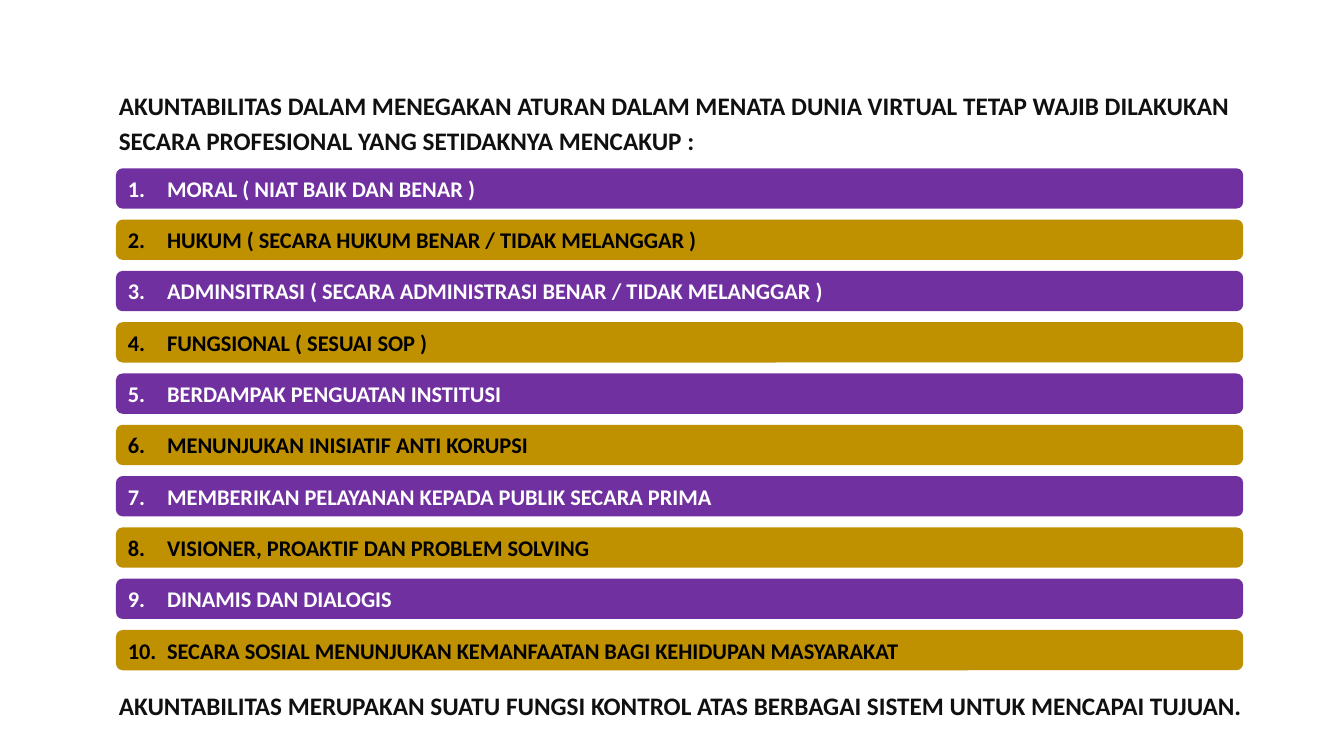
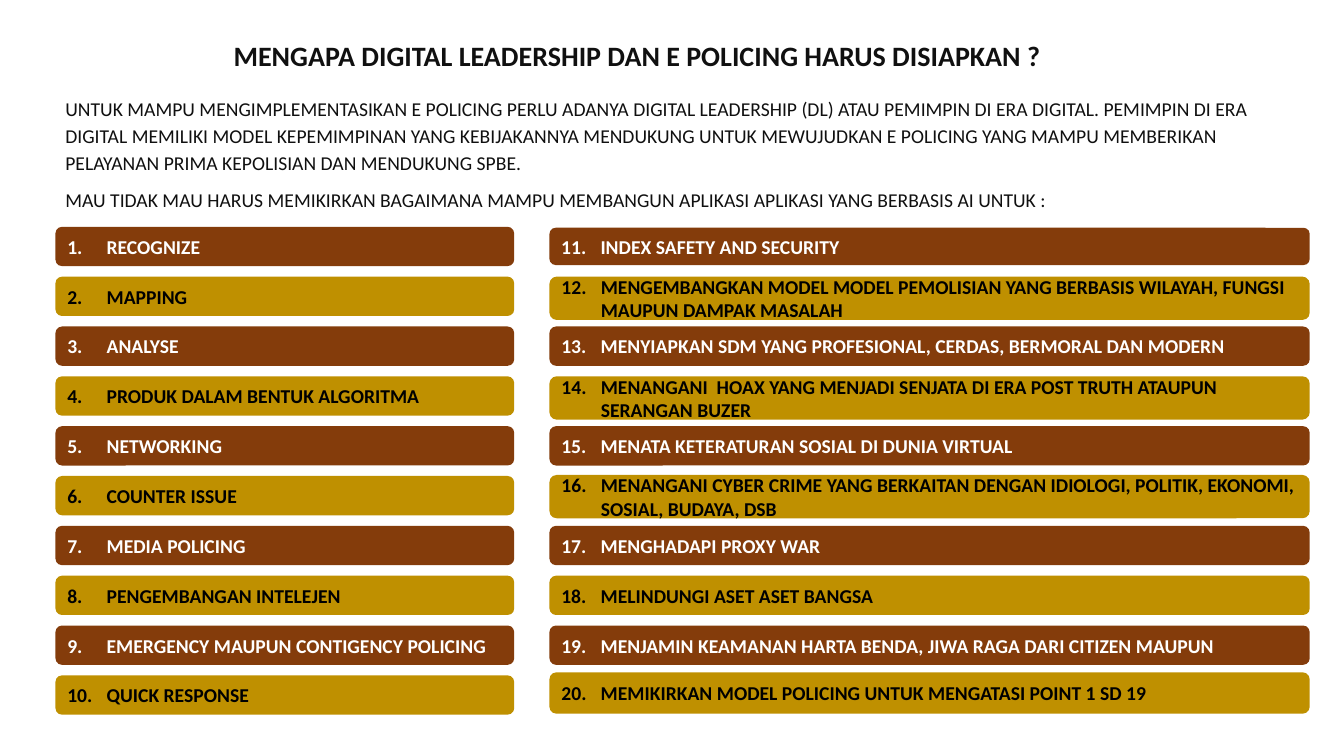
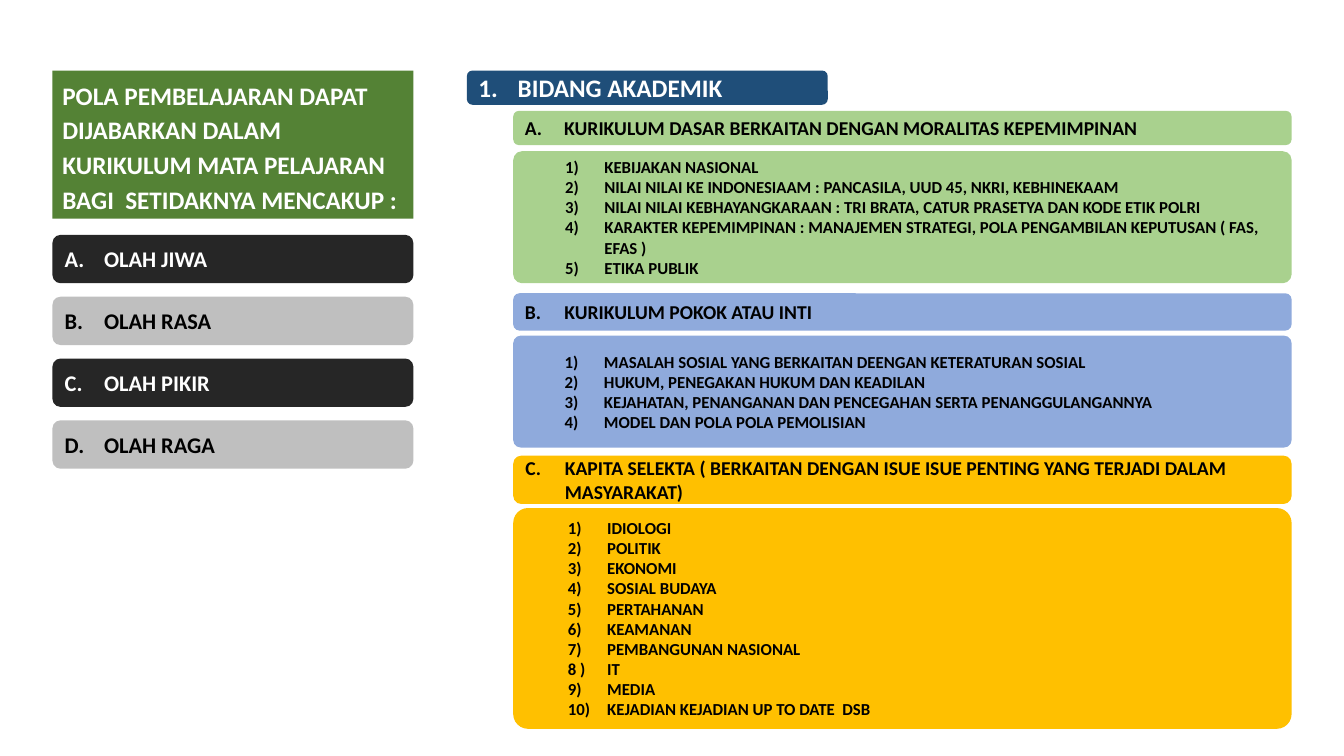
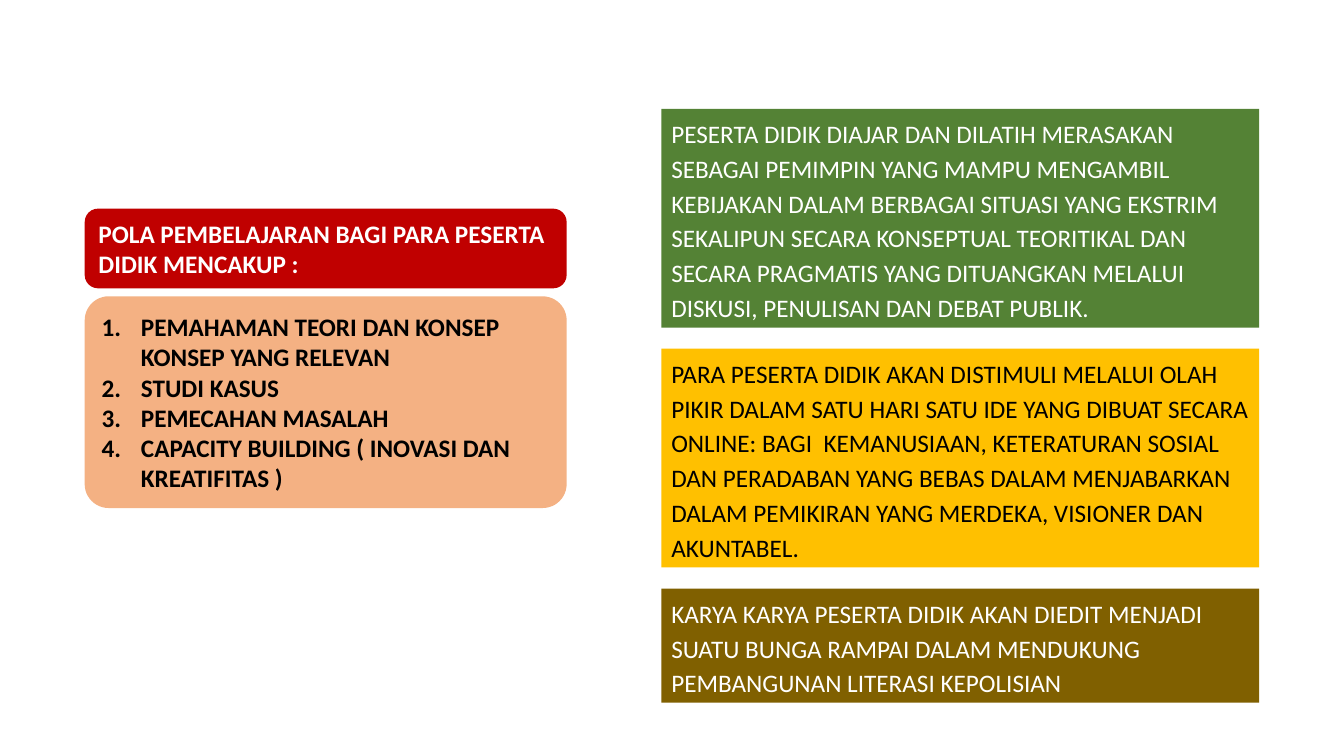
from pptx import Presentation
from pptx.dml.color import RGBColor
from pptx.enum.shapes import MSO_SHAPE
from pptx.enum.text import MSO_ANCHOR, MSO_AUTO_SIZE, PP_ALIGN
from pptx.util import Inches, Pt

COLORS = {
    "ink": "101010", "black": "000000", "white": "FFFFFF",
    "purple": "7030A0", "ochre": "BF9000", "brown": "843C0B",
    "green": "548235", "charcoal": "262626", "gray": "BFBFBF",
    "navy": "1F4E79", "light_green": "A9D18E", "light_blue": "8FAADC",
    "gold": "FFC000", "red": "C00000", "peach": "F4B183", "olive": "806000",
}
FONT = "Calibri"
HANG = 0.39


def add_box(page, text, left, top, width, height, fill=None, color="ink", size=18,
            bold=True, rounded=False, corner=None, indent=0, centered=False, space_after=10):
    place = [Inches(value) for value in (left, top, width, height)]
    if fill:
        kind = MSO_SHAPE.ROUNDED_RECTANGLE if rounded else MSO_SHAPE.RECTANGLE
        box = page.shapes.add_shape(kind, *place)
        box.shadow.inherit = False
        box.fill.solid()
        box.fill.fore_color.rgb = RGBColor.from_string(COLORS[fill])
        box.line.fill.background()
        if corner:
            box.adjustments[0] = corner
    else:
        box = page.shapes.add_textbox(*place)
    frame = box.text_frame
    frame.word_wrap = True
    frame.vertical_anchor = MSO_ANCHOR.MIDDLE if rounded else MSO_ANCHOR.TOP
    frame.auto_size = MSO_AUTO_SIZE.NONE if rounded else MSO_AUTO_SIZE.SHAPE_TO_FIT_TEXT
    lines = [text] if isinstance(text, str) else text
    for index, line in enumerate(lines):
        para = frame.paragraphs[0] if index == 0 else frame.add_paragraph()
        para.alignment = PP_ALIGN.CENTER if centered else PP_ALIGN.LEFT
        if indent:
            properties = para._p.get_or_add_pPr()
            properties.set("marL", str(Inches(indent)))
            properties.set("indent", str(-Inches(HANG)))
        if not rounded:
            para.line_spacing = 1.15
            para.space_after = Pt(space_after)
        span = para.add_run()
        span.text = line
        span.font.name = FONT
        span.font.size = Pt(size)
        span.font.bold = bold
        span.font.color.rgb = RGBColor.from_string(COLORS[color])


def add_rows(page, rows, labels, left, top, last_top, width, height, fills, size):
    step = (last_top - top) / (len(rows) - 1)
    for index, (row, label) in enumerate(zip(rows, labels)):
        text, shift, row_height = (row, 0, height) if isinstance(row, str) else row
        add_box(page, f"{label}.\t{text}", left, top + index * step + shift, width, row_height,
                fill=fills[index % 2], color=("white", "black")[index % 2],
                size=size, rounded=True, indent=HANG)


deck = Presentation()
deck.slide_width = Inches(13.33)
deck.slide_height = Inches(7.5)
blank = deck.slide_layouts[6]

page = deck.slides.add_slide(blank)
add_box(page, "AKUNTABILITAS DALAM MENEGAKAN ATURAN DALAM MENATA DUNIA VIRTUAL TETAP WAJIB "
        "DILAKUKAN SECARA PROFESIONAL YANG SETIDAKNYA MENCAKUP :", 1.08, 0.8, 11.62, 0.78)
duties = [
    "MORAL ( NIAT BAIK DAN BENAR )",
    "HUKUM ( SECARA HUKUM BENAR / TIDAK MELANGGAR )",
    "ADMINSITRASI ( SECARA ADMINISTRASI BENAR / TIDAK MELANGGAR )",
    "FUNGSIONAL ( SESUAI SOP )",
    "BERDAMPAK PENGUATAN INSTITUSI",
    "MENUNJUKAN INISIATIF ANTI KORUPSI",
    "MEMBERIKAN PELAYANAN KEPADA PUBLIK SECARA PRIMA",
    "VISIONER, PROAKTIF DAN PROBLEM SOLVING",
    "DINAMIS DAN DIALOGIS",
    "SECARA SOSIAL MENUNJUKAN KEMANFAATAN BAGI KEHIDUPAN MASYARAKAT",
]
add_rows(page, duties, range(1, 11), 1.15, 1.67, 6.25, 11.18, 0.4, ("purple", "ochre"), 16)
add_box(page, "AKUNTABILITAS MERUPAKAN SUATU FUNGSI KONTROL ATAS BERBAGAI SISTEM UNTUK "
        "MENCAPAI TUJUAN.", 1.08, 6.75, 11.62, 0.43)

page = deck.slides.add_slide(blank)
add_box(page, "MENGAPA DIGITAL LEADERSHIP DAN E POLICING HARUS DISIAPKAN ?",
        0.65, 0.28, 11.34, 0.47, size=20, centered=True, space_after=0)
add_box(page, "UNTUK MAMPU MENGIMPLEMENTASIKAN E POLICING PERLU ADANYA DIGITAL LEADERSHIP (DL) "
        "ATAU PEMIMPIN DI ERA DIGITAL. PEMIMPIN DI ERA DIGITAL MEMILIKI MODEL KEPEMIMPINAN "
        "YANG KEBIJAKANNYA MENDUKUNG UNTUK MEWUJUDKAN E POLICING YANG MAMPU MEMBERIKAN "
        "PELAYANAN PRIMA KEPOLISIAN DAN MENDUKUNG SPBE.",
        0.55, 0.88, 12.23, 0.9, size=14, bold=False)
add_box(page, "MAU TIDAK MAU HARUS MEMIKIRKAN BAGAIMANA MAMPU MEMBANGUN APLIKASI APLIKASI YANG "
        "BERBASIS AI UNTUK :", 0.55, 1.78, 12.23, 0.36, size=14, bold=False)
tools = [
    "RECOGNIZE", "MAPPING", "ANALYSE", "PRODUK DALAM BENTUK ALGORITMA", "NETWORKING",
    "COUNTER ISSUE", "MEDIA POLICING", "PENGEMBANGAN INTELEJEN",
    "EMERGENCY MAUPUN CONTIGENCY POLICING", "QUICK RESPONSE",
]
goals = [
    ("INDEX SAFETY AND SECURITY", 0.01, 0.37),
    ("MENGEMBANGKAN MODEL MODEL PEMOLISIAN YANG BERBASIS WILAYAH, FUNGSI MAUPUN DAMPAK MASALAH",
     0, 0.43),
    "MENYIAPKAN SDM YANG PROFESIONAL, CERDAS, BERMORAL DAN MODERN",
    ("MENANGANI  HOAX YANG MENJADI SENJATA DI ERA POST TRUTH ATAUPUN SERANGAN BUZER", 0, 0.43),
    "MENATA KETERATURAN SOSIAL DI DUNIA VIRTUAL",
    ("MENANGANI CYBER CRIME YANG BERKAITAN DENGAN IDIOLOGI, POLITIK, EKONOMI, SOSIAL, BUDAYA, DSB",
     -0.01, 0.43),
    "MENGHADAPI PROXY WAR",
    "MELINDUNGI ASET ASET BANGSA",
    "MENJAMIN KEAMANAN HARTA BENDA, JIWA RAGA DARI CITIZEN MAUPUN",
    ("MEMIKIRKAN MODEL POLICING UNTUK MENGATASI POINT 1 SD 19", -0.03, 0.41),
]
for rows, first, left, width in ((tools, 1, 0.55, 4.55), (goals, 11, 5.45, 7.54)):
    add_rows(page, rows, range(first, first + 10), left, 2.25, 6.7, width, 0.39,
             ("brown", "ochre"), 14)

page = deck.slides.add_slide(blank)
add_box(page, "POLA PEMBELAJARAN DAPAT DIJABARKAN DALAM KURIKULUM MATA PELAJARAN BAGI  SETIDAKNYA "
        "MENCAKUP :", 0.52, 0.7, 3.58, 1.47, fill="green", color="white")
add_rows(page, ["OLAH JIWA", "OLAH RASA", "OLAH PIKIR", "OLAH RAGA"], "ABCD",
         0.52, 2.33, 4.17, 3.58, 0.48, ("charcoal", "gray"), 16)
add_box(page, "1.\tBIDANG AKADEMIK", 4.63, 0.7, 3.58, 0.34,
        fill="navy", color="white", rounded=True, indent=HANG)
curricula = [
    ("A.\tKURIKULUM DASAR BERKAITAN DENGAN MORALITAS KEPEMIMPINAN", "light_green",
     1.1, 0.34, 1.5, 1.31, 0.78, [
         "1)\tKEBIJAKAN NASIONAL",
         "2)\tNILAI NILAI KE INDONESIAAM : PANCASILA, UUD 45, NKRI, KEBHINEKAAM",
         "3)\tNILAI NILAI KEBHAYANGKARAAN : TRI BRATA, CATUR PRASETYA DAN KODE ETIK POLRI",
         "4)\tKARAKTER KEPEMIMPINAN : MANAJEMEN STRATEGI, POLA PENGAMBILAN KEPUTUSAN ( FAS, EFAS )",
         "5)\tETIKA PUBLIK",
     ]),
    ("B.\tKURIKULUM POKOK ATAU INTI", "light_blue", 2.91, 0.37, 3.33, 1.11, 0.78, [
        "1)\tMASALAH SOSIAL YANG BERKAITAN DEENGAN KETERATURAN SOSIAL",
        "2)\tHUKUM, PENEGAKAN HUKUM DAN KEADILAN",
        "3)\tKEJAHATAN, PENANGANAN DAN PENCEGAHAN SERTA PENANGGULANGANNYA",
        "4)\tMODEL DAN POLA POLA PEMOLISIAN",
    ]),
    ("C.\tKAPITA SELEKTA ( BERKAITAN DENGAN ISUE ISUE PENTING YANG TERJADI DALAM MASYARAKAT)",
     "gold", 4.52, 0.48, 5.04, 2.19, 0.79, [
         "1)\tIDIOLOGI", "2)\tPOLITIK", "3)\tEKONOMI", "4)\tSOSIAL BUDAYA", "5)\tPERTAHANAN",
         "6)\tKEAMANAN", "7)\tPEMBANGUNAN NASIONAL", "8 )\tIT", "9)\tMEDIA",
         "10)\tKEJADIAN KEJADIAN UP TO DATE  DSB",
     ]),
]
for heading, fill, head_top, head_height, list_top, list_height, indent, topics in curricula:
    add_box(page, heading, 5.09, head_top, 7.72, head_height,
            fill=fill, color="black", size=14, rounded=True, indent=HANG)
    add_box(page, topics, 5.09, list_top, 7.72, list_height,
            fill=fill, color="black", size=12, rounded=True, corner=0.067, indent=indent)

page = deck.slides.add_slide(blank)
add_box(page, "POLA PEMBELAJARAN BAGI PARA PESERTA DIDIK MENCAKUP :", 0.84, 2.07, 4.78, 0.79,
        fill="red", color="white", rounded=True)
methods = [
    "1.\tPEMAHAMAN TEORI DAN KONSEP KONSEP YANG RELEVAN",
    "2.\tSTUDI KASUS",
    "3.\tPEMECAHAN MASALAH",
    "4.\tCAPACITY BUILDING ( INOVASI DAN KREATIFITAS )",
]
add_box(page, methods, 0.84, 2.94, 4.78, 2.1,
        fill="peach", color="black", rounded=True, corner=0.113, indent=HANG)
outcomes = [
    ("PESERTA DIDIK DIAJAR DAN DILATIH MERASAKAN SEBAGAI PEMIMPIN YANG MAMPU MENGAMBIL KEBIJAKAN "
     "DALAM BERBAGAI SITUASI YANG EKSTRIM SEKALIPUN SECARA KONSEPTUAL TEORITIKAL DAN SECARA "
     "PRAGMATIS YANG DITUANGKAN MELALUI DISKUSI, PENULISAN DAN DEBAT PUBLIK.",
     2.17, "green", "white"),
    ("PARA PESERTA DIDIK AKAN DISTIMULI MELALUI OLAH PIKIR DALAM SATU HARI SATU IDE YANG DIBUAT "
     "SECARA ONLINE: BAGI  KEMANUSIAAN, KETERATURAN SOSIAL DAN PERADABAN YANG BEBAS DALAM "
     "MENJABARKAN DALAM PEMIKIRAN YANG MERDEKA, VISIONER DAN AKUNTABEL.",
     2.17, "gold", "black"),
    ("KARYA KARYA PESERTA DIDIK AKAN DIEDIT MENJADI SUATU BUNGA RAMPAI DALAM MENDUKUNG "
     "PEMBANGUNAN LITERASI KEPOLISIAN", 1.13, "olive", "white"),
]
top = 1.08
for text, height, fill, color in outcomes:
    add_box(page, text, 6.56, top, 5.93, height, fill=fill, color=color, bold=False)
    top += height + 0.21

deck.save("out.pptx")
